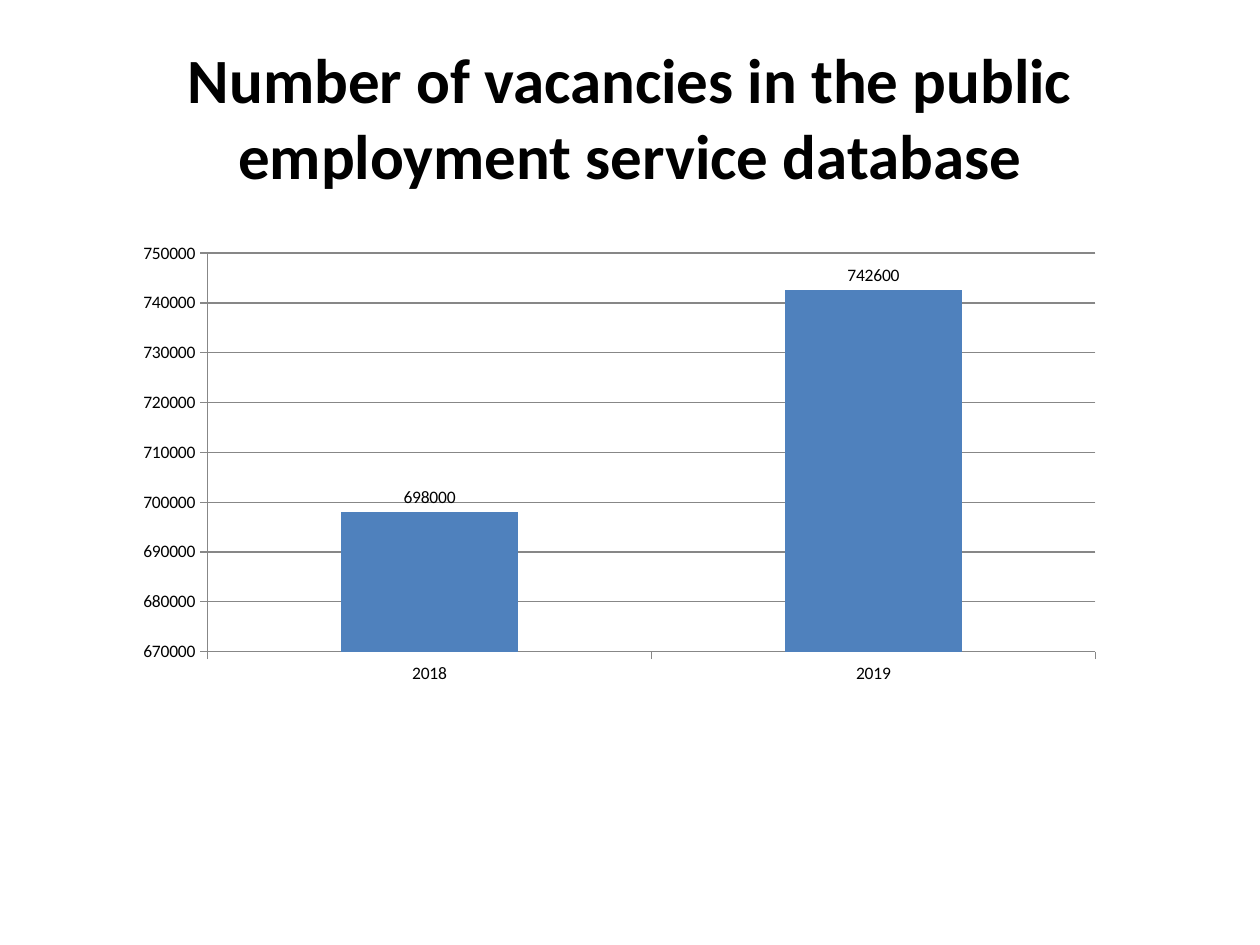
from pptx import Presentation
from pptx.chart.data import CategoryChartData
from pptx.dml.color import RGBColor
from pptx.enum.chart import XL_CHART_TYPE, XL_LABEL_POSITION, XL_TICK_MARK
from pptx.enum.text import MSO_ANCHOR, PP_ALIGN
from pptx.util import Cm, Pt

COLUMNS = XL_CHART_TYPE.COLUMN_CLUSTERED
ABOVE_BAR = XL_LABEL_POSITION.OUTSIDE_END
OUTSIDE = XL_TICK_MARK.OUTSIDE
NO_TICK = XL_TICK_MARK.NONE
MIDDLE = MSO_ANCHOR.MIDDLE
CENTER = PP_ALIGN.CENTER
TITLE_ONLY = 5


def color(hex_value):
    return RGBColor.from_string(hex_value)


def apply(target, values):
    for name, value in values.items():
        setattr(target, name, value)


class SlideBuilder:
    font_name = "Calibri"
    text_color = "000000"
    bar_color = "4F81BD"
    line_color = "878787"

    def __init__(self, presentation):
        self.slide = presentation.slides.add_slide(
            presentation.slide_layouts[TITLE_ONLY])

    def format_font(self, font, size, bold=False):
        apply(font, {"name": self.font_name, "size": Pt(size), "bold": bold})
        font.color.rgb = color(self.text_color)

    def format_line(self, line):
        line.color.rgb = color(self.line_color)
        line.width = Pt(0.75)

    def title(self, text, left, top, width, height):
        heading = self.slide.shapes.title
        apply(heading, {"left": Cm(left), "top": Cm(top),
                        "width": Cm(width), "height": Cm(height)})
        frame = heading.text_frame
        apply(frame, {"text": text, "vertical_anchor": MIDDLE, "word_wrap": True})
        paragraph = frame.paragraphs[0]
        paragraph.alignment = CENTER
        self.format_font(paragraph.runs[0].font, 36, bold=True)

    def column_chart(self, series_name, values, scale, left, top, width, height):
        data = CategoryChartData()
        data.categories = list(values)
        data.add_series(series_name, list(values.values()))
        chart = self.slide.shapes.add_chart(
            COLUMNS, Cm(left), Cm(top), Cm(width), Cm(height), data).chart
        apply(chart, {"has_legend": False, "has_title": False})
        self.format_font(chart.font, 10)

        # Axes and gridlines
        for axis in (chart.category_axis, chart.value_axis):
            apply(axis, {"major_tick_mark": OUTSIDE, "minor_tick_mark": NO_TICK})
            self.format_line(axis.format.line)
        apply(chart.value_axis, {**scale, "has_major_gridlines": True})
        self.format_line(chart.value_axis.major_gridlines.format.line)

        # Bars and their labels
        plot = chart.plots[0]
        apply(plot, {"gap_width": 150, "vary_by_categories": False,
                     "has_data_labels": True})
        apply(plot.data_labels, {"show_value": True, "position": ABOVE_BAR})
        self.format_font(plot.data_labels.font, 10)
        bar_fill = plot.series[0].format.fill
        bar_fill.solid()
        bar_fill.fore_color.rgb = color(self.bar_color)


def main():
    presentation = Presentation()
    apply(presentation, {"slide_width": Cm(25.4), "slide_height": Cm(19.05)})
    builder = SlideBuilder(presentation)

    # Heading
    builder.title("Number of vacancies in the public employment service database",
                  1.27, 0.76, 22.86, 3.18)

    # Vacancies by year
    vacancies = {"2018": 698000, "2019": 742600}
    scale = {"minimum_scale": 670000, "maximum_scale": 750000, "major_unit": 10000}
    builder.column_chart("Series 1", vacancies, scale, 2.49, 4.72, 19.99, 9.25)

    presentation.save("out.pptx")


if __name__ == "__main__":
    main()
